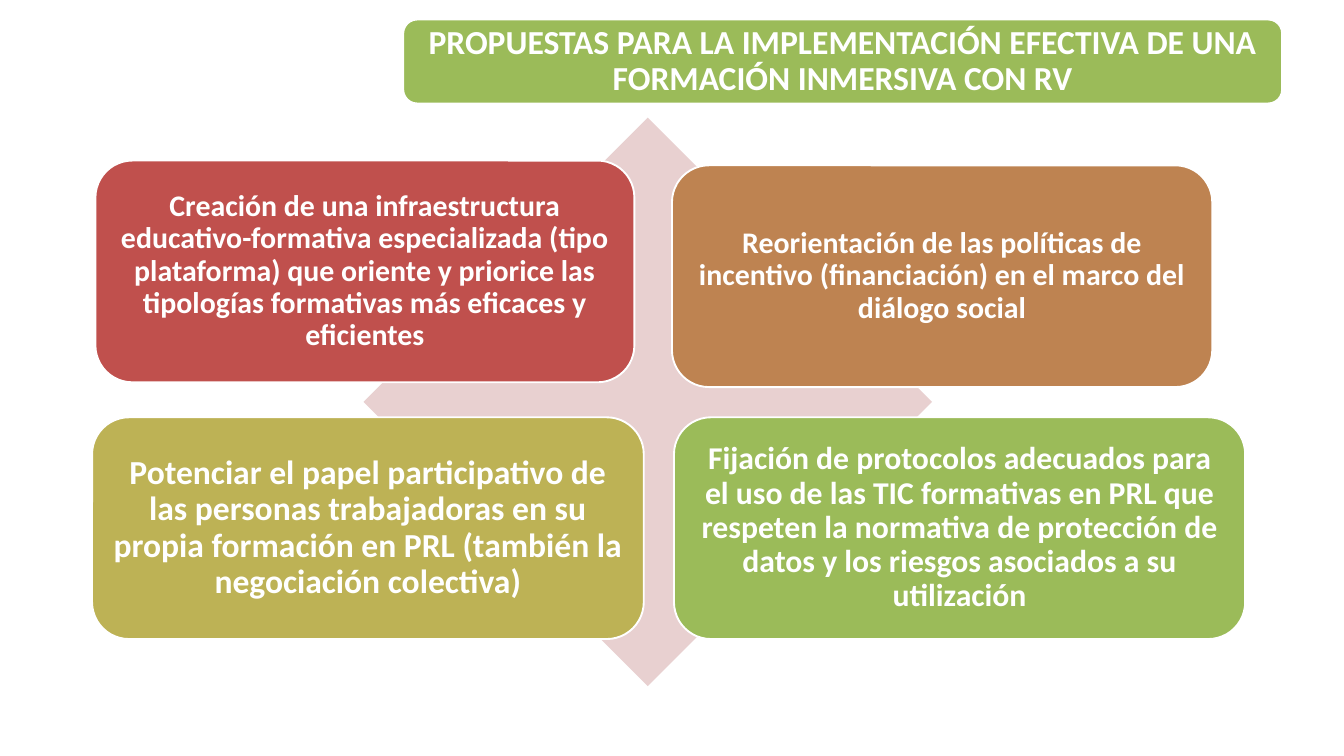
import dataclasses

import pptx
import pptx.dml.color
import pptx.enum.shapes
import pptx.enum.text
import pptx.util

WIDE = pptx.util.Inches(20)
HIGH = pptx.util.Inches(11.25)
FONT = "Calibri"
COLORS = {
    "white": "FFFFFF",
    "pink": "E8D0D0",
    "red": "C0504D",
    "brown": "BE8351",
    "olive": "BDB255",
    "green": "9BBB59",
}
KIND = pptx.enum.shapes.MSO_SHAPE


@dataclasses.dataclass
class Box:
    """Left, top, width and height in percent of the slide's size."""
    left: float
    top: float
    width: float
    height: float

    def place(self) -> tuple[int, int, int, int]:
        return (int(WIDE * self.left / 100), int(HIGH * self.top / 100),
                int(WIDE * self.width / 100), int(HIGH * self.height / 100))


@dataclasses.dataclass
class Card:
    text: str
    left: float
    top: float
    width: float
    fill: str
    size: int


TITLE = "PROPUESTAS PARA LA IMPLEMENTACIÓN EFECTIVA DE UNA FORMACIÓN INMERSIVA CON RV"
BANNER = Box(30, 2.58, 65.4, 11.11)
HEAD = Box(30.3, 3.11, 64.8, 10.04)
CROSS = Box(27.05, 15.56, 42.3, 75.2)
CARD_H = 29.33
LOW = 55.2
CARDS = [
    Card("Creación de una infraestructura educativo-formativa especializada (tipo "
         "plataforma) que oriente y priorice las tipologías formativas más eficaces "
         "y eficientes", 7.1, 21.24, 40.1, "red", 32),
    Card("Reorientación de las políticas de incentivo (financiación) en el marco "
         "del diálogo social", 50, 21.87, 40.2, "brown", 32),
    Card("Potenciar el papel participativo de las personas trabajadoras en su propia "
         "formación en PRL (también la negociación colectiva)",
         6.85, LOW, 41.05, "olive", 36),
    Card("Fijación de protocolos adecuados para el uso de las TIC formativas en PRL "
         "que respeten la normativa de protección de datos y los riesgos asociados "
         "a su utilización", 50.15, LOW, 42.5, "green", 34),
]


def color(name: str) -> pptx.dml.color.RGBColor:
    return pptx.dml.color.RGBColor.from_string(COLORS[name])


def draw(slide, kind, box: Box, fill: str, edge: str | None = None):
    shape = slide.shapes.add_shape(kind, *box.place())
    shape.shadow.inherit = False
    shape.fill.solid()
    shape.fill.fore_color.rgb = color(fill)
    if edge:
        shape.line.color.rgb = color(edge)
        shape.line.width = pptx.util.Pt(2)
    else:
        shape.line.fill.background()
    return shape


def write(shape, text: str, *, size: int, ink: str = "white", bold: bool = True) -> None:
    """Centre the text in the shape, with margins that grow with its size."""
    frame = shape.text_frame
    frame.text = text
    frame.word_wrap = True
    frame.auto_size = pptx.enum.text.MSO_AUTO_SIZE.NONE
    frame.vertical_anchor = pptx.enum.text.MSO_ANCHOR.MIDDLE
    for side in ("left", "top", "right", "bottom"):
        setattr(frame, f"margin_{side}", pptx.util.Inches(size / 240))
    para = frame.paragraphs[0]
    para.alignment = pptx.enum.text.PP_ALIGN.CENTER
    para.line_spacing = 0.9
    font = para.runs[0].font
    font.name, font.size, font.bold = FONT, pptx.util.Pt(size), bold
    font.color.rgb = color(ink)


def main() -> None:
    deck = pptx.Presentation()
    deck.slide_width, deck.slide_height = WIDE, HIGH
    slide = deck.slides.add_slide(deck.slide_layouts[5])

    draw(slide, KIND.ROUNDED_RECTANGLE, BANNER, "green", "white")
    title = slide.shapes.title
    title.left, title.top, title.width, title.height = HEAD.place()
    write(title, TITLE, size=36)
    slide.shapes.element.append(title.element)  # bring in front of the banner

    draw(slide, KIND.DIAMOND, CROSS, "pink")
    for card in CARDS:
        box = Box(card.left, card.top, card.width, CARD_H)
        shape = draw(slide, KIND.ROUNDED_RECTANGLE, box, card.fill, "white")
        write(shape, card.text, size=card.size)

    deck.save("out.pptx")


if __name__ == "__main__":
    main()
